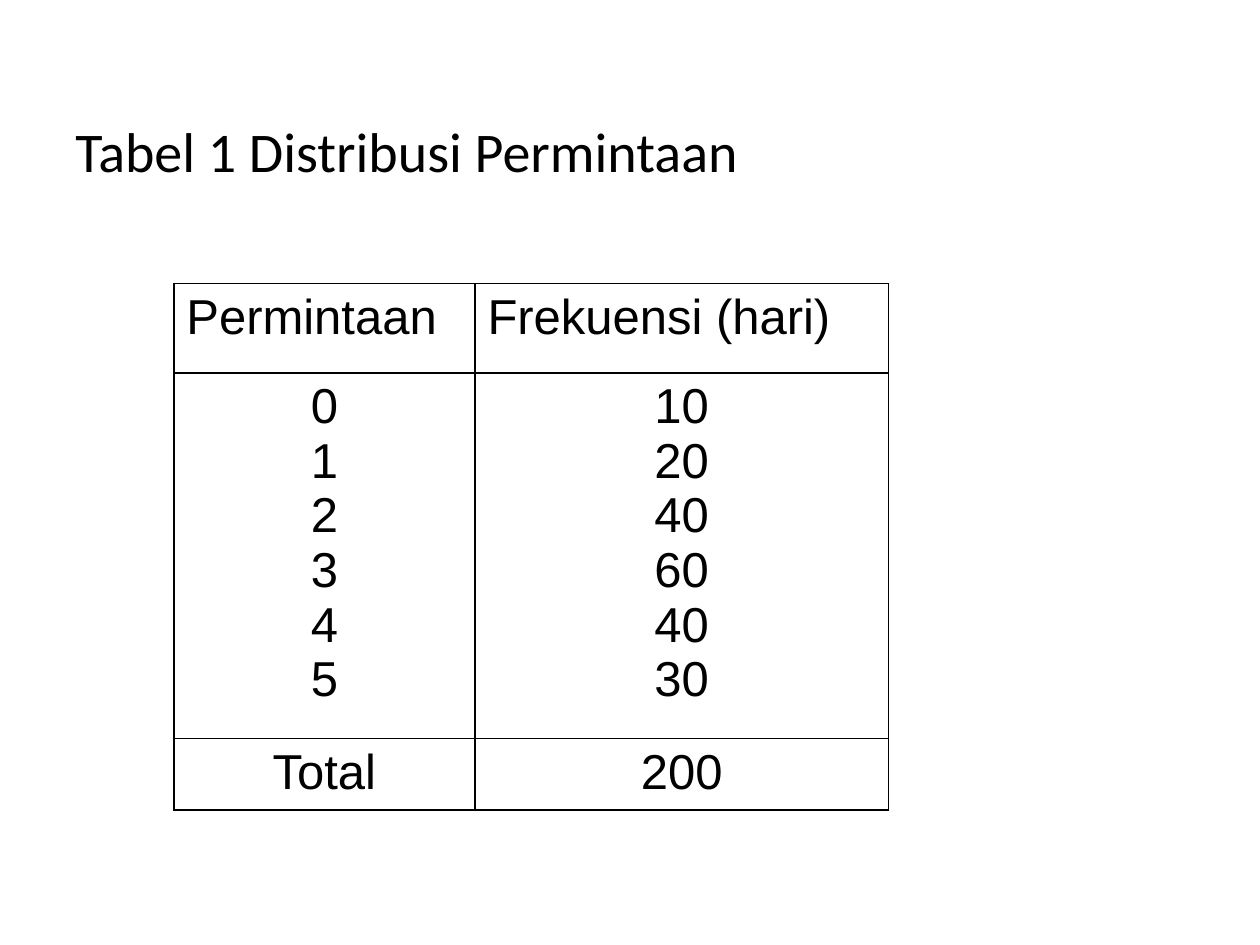
from lxml import etree
from pptx import Presentation
from pptx.dml.color import RGBColor
from pptx.enum.text import MSO_ANCHOR, PP_ALIGN
from pptx.oxml.ns import qn
from pptx.util import Inches, Pt

MIDDLE = MSO_ANCHOR.MIDDLE
LEFT, CENTER = PP_ALIGN.LEFT, PP_ALIGN.CENTER
INK = "000000"

COLUMN_WIDTHS = [2.39, 3.28]
ROW_HEIGHTS = [0.71, 2.7, 0.54]
DEMAND_ROWS = [
    ["Permintaan", "Frekuensi (hari)"],
    ["0\n1\n2\n3\n4\n5", "10\n20\n40\n60\n40\n30"],
    ["Total", "200"],
]


def color(hex_value):
    """Return the RGB colour for a hex string."""
    return RGBColor.from_string(hex_value)


def style_text(frame, font_name, size, alignment):
    """Format every paragraph and run of a text frame."""
    for paragraph in frame.paragraphs:
        paragraph.alignment = alignment
        for run in paragraph.runs:
            run.font.name = font_name
            run.font.size = Pt(size)
            run.font.color.rgb = color(INK)


def add_borders(cell, width, hex_value):
    """Draw a solid line on all four sides of a table cell."""
    properties = cell._tc.get_or_add_tcPr()
    for position, side in enumerate(["a:lnL", "a:lnR", "a:lnT", "a:lnB"]):
        line = etree.Element(qn(side), w=str(Pt(width)))
        fill = etree.SubElement(line, qn("a:solidFill"))
        etree.SubElement(fill, qn("a:srgbClr"), val=hex_value)
        properties.insert(position, line)


def add_title(slide, left, top, width, height):
    """Place the slide heading in the given box."""
    heading = slide.shapes.add_textbox(
        Inches(left), Inches(top), Inches(width), Inches(height)
    )
    frame = heading.text_frame
    frame.word_wrap = True
    frame.vertical_anchor = MIDDLE
    frame.text = "Tabel 1 Distribusi Permintaan"
    style_text(frame, "Calibri", 32, LEFT)


def add_demand_table(slide, left, top):
    """Place the demand distribution table at the given corner."""
    demand = slide.shapes.add_table(
        len(ROW_HEIGHTS), len(COLUMN_WIDTHS), Inches(left), Inches(top),
        Inches(sum(COLUMN_WIDTHS)), Inches(sum(ROW_HEIGHTS)),
    ).table
    demand.horz_banding = False
    demand.first_row = False
    for column, width in zip(demand.columns, COLUMN_WIDTHS):
        column.width = Inches(width)
    for row_index, (row, height) in enumerate(zip(demand.rows, ROW_HEIGHTS)):
        row.height = Inches(height)
        for cell, entry in zip(row.cells, DEMAND_ROWS[row_index]):
            cell.text_frame.text = entry
            style_text(cell.text_frame, "Arial", 28, CENTER if row_index else LEFT)
            cell.fill.background()
            add_borders(cell, 1, INK)


def main():
    """Build and save the presentation."""
    presentation = Presentation()
    presentation.slide_width = Inches(10)
    presentation.slide_height = Inches(7.5)
    slide = presentation.slides.add_slide(presentation.slide_layouts[6])
    add_title(slide, 0.5, 0.83, 9, 0.72)
    add_demand_table(slide, 1.38, 2.25)
    presentation.save("out.pptx")


if __name__ == "__main__":
    main()
